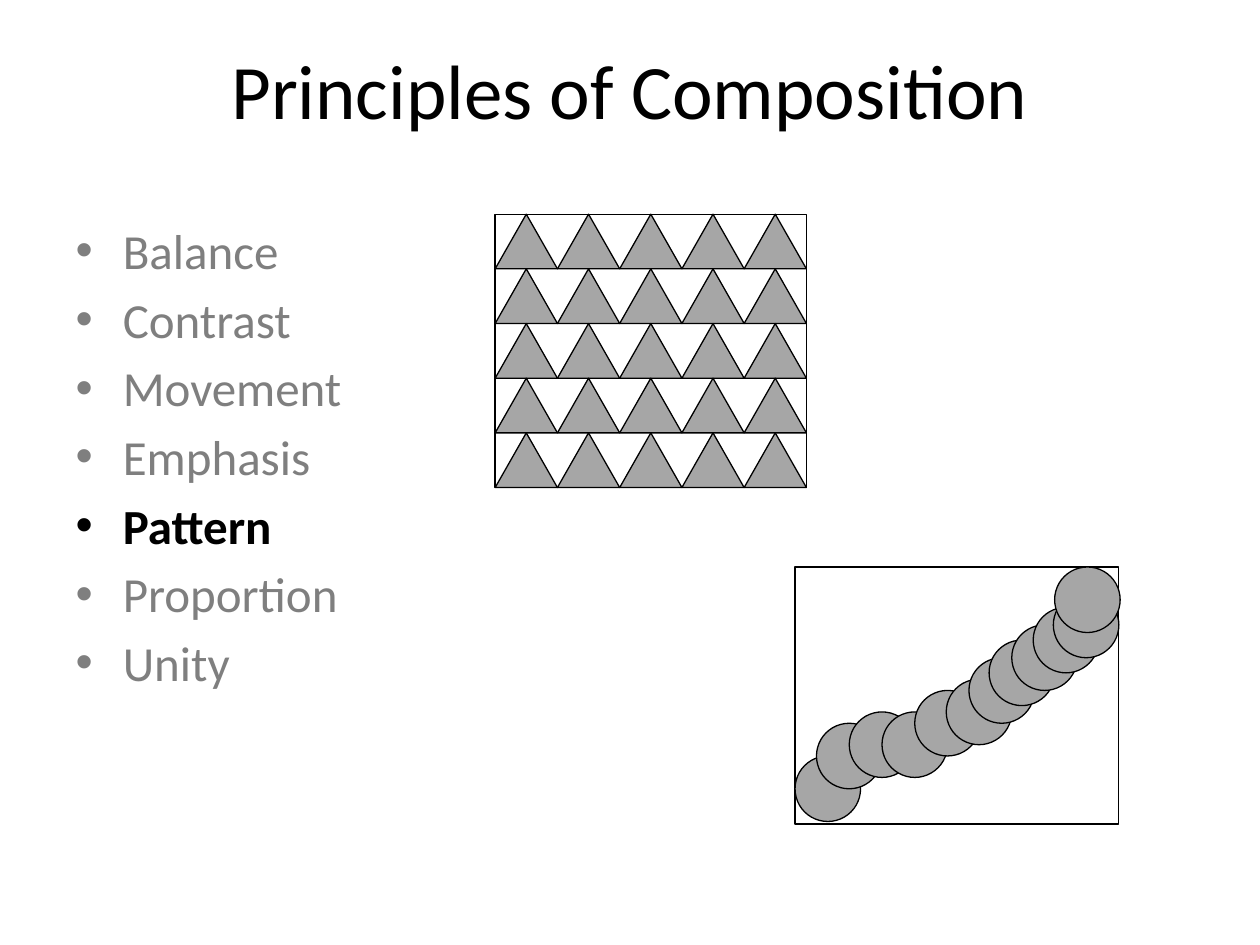
import pptx
import pptx.util
import pptx.dml.color
import pptx.enum.shapes
import pptx.enum.text

Inches, Pt = pptx.util.Inches, pptx.util.Pt
SHAPE = pptx.enum.shapes.MSO_SHAPE
BLACK, GRAY, FILL = "000000", "7F7F7F", "A6A6A6"


def rgb(color):
    return pptx.dml.color.RGBColor.from_string(color)


def add_outlined(group, kind, x, y, w, h, fill=None):
    """Add a thin black outlined shape, unfilled unless a colour is given."""
    sp = group.shapes.add_shape(kind, Inches(x), Inches(y), Inches(w), Inches(h))
    sp.shadow.inherit = False
    sp.line.color.rgb = rgb(BLACK)
    sp.line.width = Pt(0.75)
    if fill:
        sp.fill.solid()
        sp.fill.fore_color.rgb = rgb(fill)
    else:
        sp.fill.background()


prs = pptx.Presentation()
prs.slide_width, prs.slide_height = Inches(10), Inches(7.5)
s = prs.slides.add_slide(prs.slide_layouts[1])

# Title
title = s.shapes.title
title.left, title.top = Inches(0.5), Inches(0.08)
title.width, title.height = Inches(9), Inches(1.25)
tf = title.text_frame
tf.vertical_anchor = pptx.enum.text.MSO_ANCHOR.MIDDLE
p = tf.paragraphs[0]
p.alignment = pptx.enum.text.PP_ALIGN.CENTER
r = p.add_run()
r.text = "Principles of Composition"
r.font.name, r.font.size = "Calibri", Pt(44)
r.font.color.rgb = rgb(BLACK)

# List of principles, with the current one highlighted
body = s.placeholders[1]
body.left, body.top = Inches(0.5), Inches(1.7)
body.width, body.height = Inches(2.92), Inches(4.21)
tf = body.text_frame
principles = ["Balance", "Contrast", "Movement", "Emphasis",
              "Pattern", "Proportion", "Unity"]
for i, principle in enumerate(principles):
    p = tf.add_paragraph() if i else tf.paragraphs[0]
    r = p.add_run()
    r.text = principle
    current = principle == "Pattern"
    r.font.name, r.font.size = "Calibri", Pt(28)
    r.font.bold = current
    r.font.color.rgb = rgb(BLACK if current else GRAY)

# Regular pattern: a grid of triangles filling its frame
left, top, width, height = 3.93, 1.7, 2.47, 2.17
rows = cols = 5
cell_w, cell_h = width / cols, height / rows
grid = s.shapes.add_group_shape()
add_outlined(grid, SHAPE.RECTANGLE, left, top, width, height)
for row in range(rows):
    for col in range(cols):
        add_outlined(grid, SHAPE.ISOSCELES_TRIANGLE, left + col * cell_w,
                     top + row * cell_h, cell_w, cell_h, FILL)

# Flowing pattern: overlapping circles rising to the right
diameter = 0.52
circles = [(6.31, 6), (6.48, 5.74), (6.74, 5.65), (7, 5.65),
           (7.26, 5.48), (7.51, 5.39), (7.69, 5.22), (7.85, 5.08),
           (8.03, 4.96), (8.2, 4.82), (8.36, 4.7), (8.37, 4.5)]
chain = s.shapes.add_group_shape()
add_outlined(chain, SHAPE.RECTANGLE, 6.31, 4.5, 2.57, 2.04)
for x, y in circles:
    add_outlined(chain, SHAPE.OVAL, x, y, diameter, diameter, FILL)

prs.save("out.pptx")
